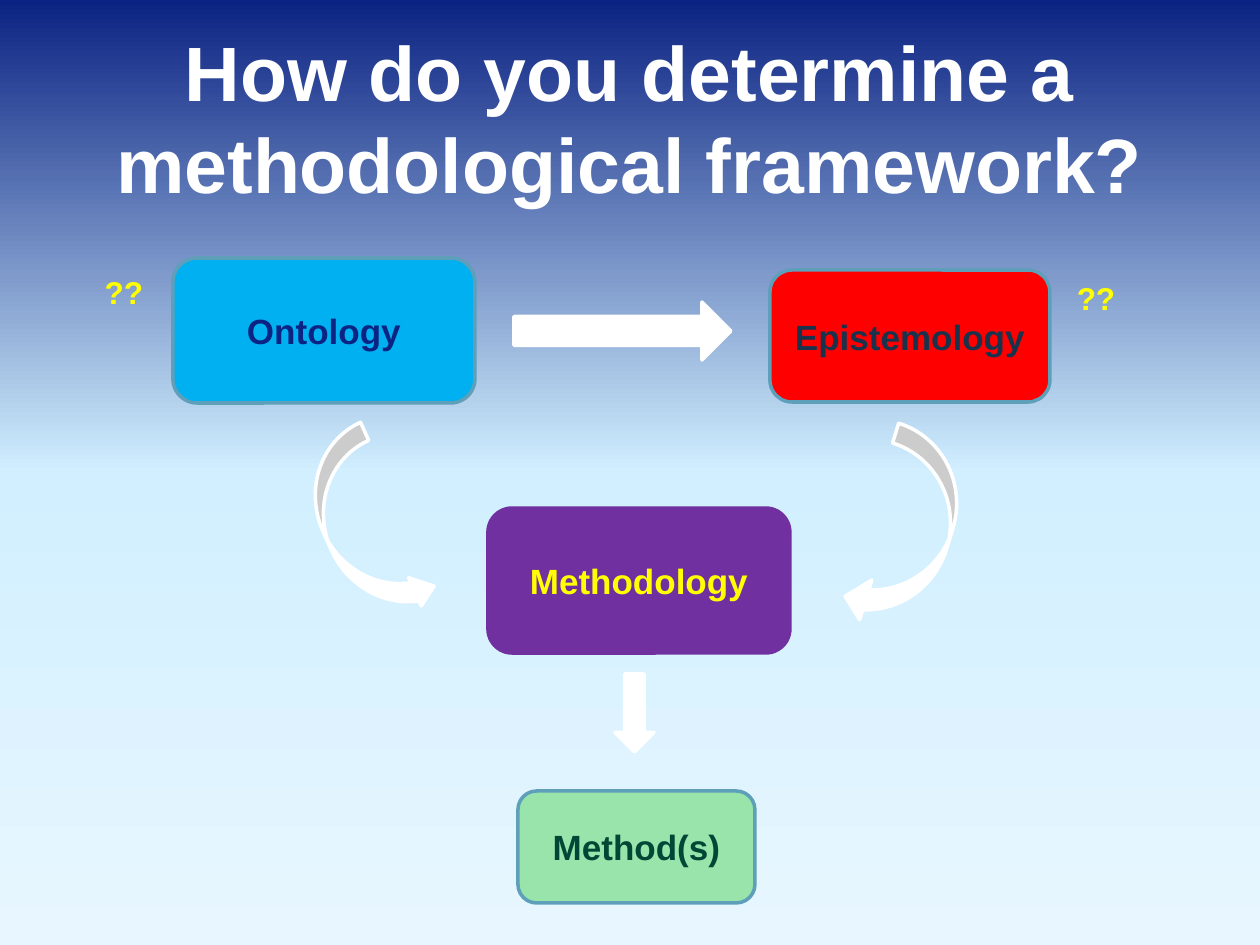
"""Build a slide showing how ontology and epistemology lead to methodology and methods."""
from copy import deepcopy

from pptx import Presentation
from pptx.dml.color import RGBColor
from pptx.enum.shapes import MSO_SHAPE
from pptx.enum.text import MSO_ANCHOR, MSO_AUTO_SIZE, PP_ALIGN
from pptx.oxml.ns import qn
from pptx.util import Pt

ROUNDED = MSO_SHAPE.ROUNDED_RECTANGLE
RIGHT = MSO_SHAPE.RIGHT_ARROW
DOWN = MSO_SHAPE.DOWN_ARROW
CURVED_RIGHT = MSO_SHAPE.CURVED_RIGHT_ARROW
CURVED_LEFT = MSO_SHAPE.CURVED_LEFT_ARROW
MIDDLE, TOP = MSO_ANCHOR.MIDDLE, MSO_ANCHOR.TOP
CENTER = PP_ALIGN.CENTER
NO_AUTOFIT = MSO_AUTO_SIZE.NONE

WHITE = RGBColor(0xFF, 0xFF, 0xFF)
YELLOW = RGBColor(0xFF, 0xFF, 0x00)
NAVY = RGBColor(0x0B, 0x23, 0x82)
PALE_BLUE = RGBColor(0xD1, 0xEF, 0xFF)
ICE_BLUE = RGBColor(0xE8, 0xF7, 0xFF)
SKY_BLUE = RGBColor(0x00, 0xB0, 0xF0)
STEEL_BLUE = RGBColor(0x5E, 0x9F, 0xBA)
RED = RGBColor(0xFF, 0x00, 0x00)
SLATE = RGBColor(0x19, 0x33, 0x4D)
PURPLE = RGBColor(0x70, 0x30, 0xA0)
MINT = RGBColor(0x98, 0xE4, 0xAA)
DARK_GREEN = RGBColor(0x01, 0x47, 0x36)

PX = 914400 / 126


def px(*lengths):
    return [round(length * PX) for length in lengths]


def write(shape, text, size, color, anchor=MIDDLE):
    frame = shape.text_frame
    frame.text = text
    frame_format = {"word_wrap": True, "auto_size": NO_AUTOFIT, "vertical_anchor": anchor}
    for name, value in frame_format.items():
        setattr(frame, name, value)
    paragraph = frame.paragraphs[0]
    paragraph.alignment = CENTER
    font = paragraph.runs[0].font
    for name, value in {"name": "Arial", "size": Pt(size), "bold": True}.items():
        setattr(font, name, value)
    font.color.rgb = color


presentation = Presentation()
presentation.slide_width, presentation.slide_height = px(1260, 945)
slide = presentation.slides.add_slide(presentation.slide_layouts[5])

background = slide.background.fill
background.gradient()
background.gradient_angle = 270
stop_list = next(slide.element.iter(qn("a:gsLst")))
stop_list.append(deepcopy(stop_list[-1]))
for stop, position, color in zip(
    background.gradient_stops, (0, 0.5, 1), (NAVY, PALE_BLUE, ICE_BLUE)
):
    stop.position = position
    stop.color.rgb = color

title = slide.shapes.title
title.left, title.top, title.width, title.height = px(63, 38, 1134, 157)
write(title, "How do you determine a methodological framework?", 44, WHITE)

boxes = [
    ("Ontology", (173, 258, 302, 145), SKY_BLUE, STEEL_BLUE, NAVY),
    ("Epistemology", (770, 270, 280, 132), RED, STEEL_BLUE, SLATE),
    ("Methodology", (488, 508, 302, 145), PURPLE, PURPLE, YELLOW),
    ("Method(s)", (518, 791, 237, 112), MINT, STEEL_BLUE, DARK_GREEN),
]
arrows = [
    (RIGHT, (514, 302, 217, 58), 0),
    (CURVED_RIGHT, (325, 430, 79, 195), 335.8),
    (CURVED_LEFT, (867, 431, 83, 202), 17.2),
    (DOWN, (615, 674, 39, 78), 0),
]
items = [(ROUNDED, area, 0, fill, line, text, color) for text, area, fill, line, color in boxes]
items += [(kind, area, angle, WHITE, WHITE, "", None) for kind, area, angle in arrows]

for kind, area, angle, fill, line, text, color in items:
    shape = slide.shapes.add_shape(kind, *px(*area))
    shape.shadow.inherit = False
    shape.rotation = angle
    shape.fill.solid()
    shape.fill.fore_color.rgb = fill
    shape.line.color.rgb = line
    shape.line.width = Pt(2)
    if text:
        write(shape, text, 20, color)
    if kind == CURVED_RIGHT:
        shape.adjustments[1] = 0.39

for area in ((86, 267, 76, 50), (1062, 273, 68, 50)):
    write(slide.shapes.add_textbox(*px(*area)), "??", 18, YELLOW, TOP)

presentation.save("out.pptx")
